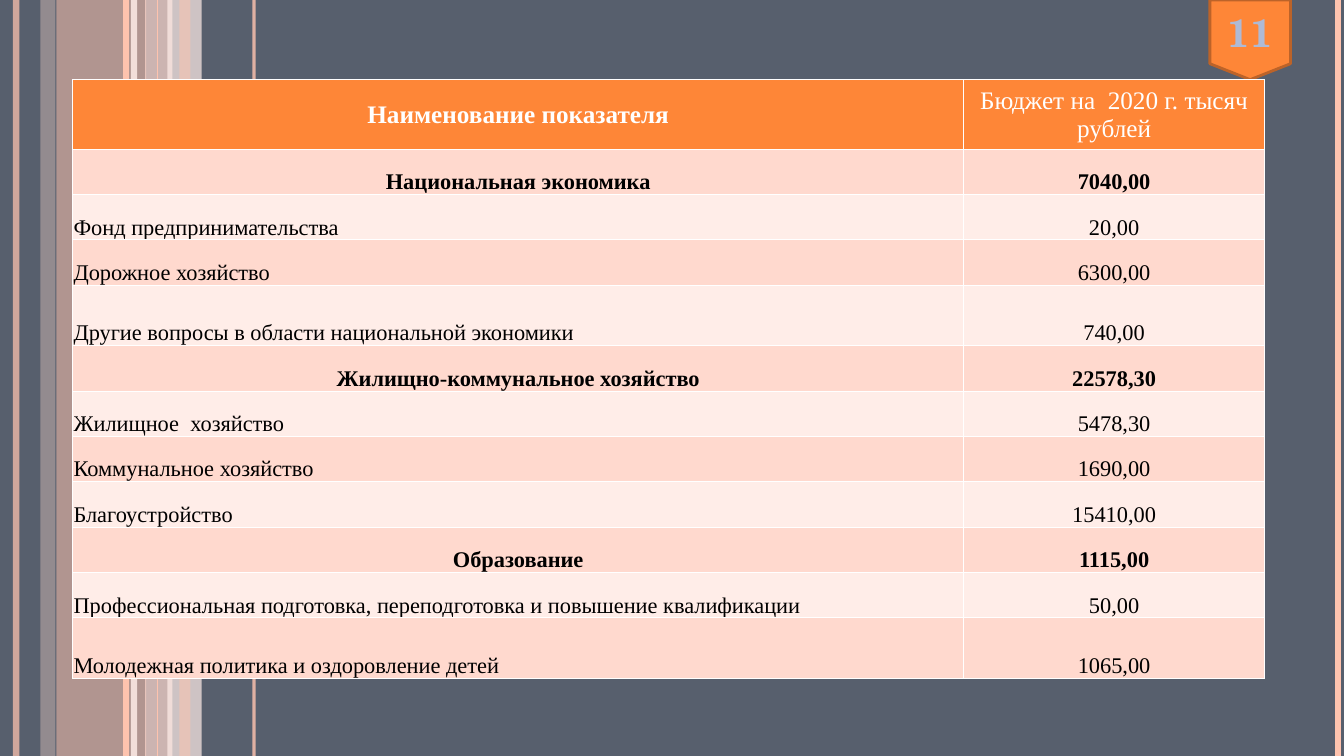
from lxml import etree
from pptx import Presentation
from pptx.dml.color import RGBColor
from pptx.enum.shapes import MSO_CONNECTOR, MSO_SHAPE
from pptx.enum.text import MSO_ANCHOR as Anchor, PP_ALIGN as Align
from pptx.oxml.ns import qn
from pptx.util import Inches, Pt

# Colours
SLATE = RGBColor(0x57, 0x5F, 0x6D)
ORANGE = RGBColor(0xFE, 0x86, 0x37)
BROWN = RGBColor(0xBC, 0x63, 0x29)
PEACH = RGBColor(0xFE, 0xC3, 0xAE)
PINK = RGBColor(0xFF, 0xD9, 0xCE)
PALE = RGBColor(0xFF, 0xED, 0xE8)
BLUE = RGBColor(0xAE, 0xBA, 0xD5)
WHITE = RGBColor(0xFF, 0xFF, 0xFF)
BLACK = RGBColor(0, 0, 0)

# Content: name, value, is it a section total
HEAD = ("Наименование показателя", "Бюджет на  2020 г. тысяч рублей")
ROWS = [
    ("Национальная экономика", "7040,00", True),
    ("Фонд предпринимательства", "20,00", False),
    ("Дорожное хозяйство", "6300,00", False),
    ("Другие вопросы в области национальной экономики", "740,00", False),
    ("Жилищно-коммунальное хозяйство", "22578,30", True),
    ("Жилищное  хозяйство", "5478,30", False),
    ("Коммунальное хозяйство", "1690,00", False),
    ("Благоустройство", "15410,00", False),
    ("Образование", "1115,00", True),
    ("Профессиональная подготовка, переподготовка и повышение квалификации",
     "50,00", False),
    ("Молодежная политика и оздоровление детей", "1065,00", False),
]
TALL = (4, 11)
COLS = (8.84, 2.98)
PAGE = "11"

# Stripes from back to front: left, width, colour, opacity %
BANDS = [(0.56, 0.89, PEACH, 54), (0.4, 0.15, PINK, 36),
         (1.44, 0.27, PINK, 70), (1.66, 0.34, PALE, 71)]
# Lines: x, points, colour, opacity %
LINES = [(0.16, 4.5, PEACH, 73), (1.33, 4.5, PALE, 83),
         (1.25, 4.5, PEACH, 100), (2.52, 2.25, PEACH, 82),
         (1.56, 0.75, PEACH, 100)]
INNER = (1.78, 0.11, PEACH, 51)
EDGE = (13.27, 4.5, PEACH, 100)
HIGH = 7.5

deck = Presentation()
deck.slide_width, deck.slide_height = Inches(13.33), Inches(HIGH)
slide = deck.slides.add_slide(deck.slide_layouts[6])
slide.background.fill.solid()
slide.background.fill.fore_color.rgb = SLATE


def fade(shape, share):
    if share < 100:
        tint = next(shape._element.spPr.iter(qn("a:srgbClr")))
        etree.SubElement(tint, qn("a:alpha"), val=str(share * 1000))


def add_band(left, width, tone, share):
    band = slide.shapes.add_shape(MSO_SHAPE.RECTANGLE, Inches(left), 0,
                                  Inches(width), Inches(HIGH))
    band.shadow.inherit = False
    band.fill.solid()
    band.fill.fore_color.rgb = tone
    band.line.fill.background()
    fade(band, share)


def add_line(x, size, tone, share):
    line = slide.shapes.add_connector(MSO_CONNECTOR.STRAIGHT, Inches(x), 0,
                                      Inches(x), Inches(HIGH))
    line.line.width = Pt(size)
    line.line.color.rgb = tone
    fade(line, share)
    etree.SubElement(line._element.spPr, qn("a:effectLst"))


def style(frame, face, size, tone, bold, align):
    para = frame.paragraphs[0]
    para.alignment = align
    font = para.runs[0].font
    font.name, font.size, font.bold = face, Pt(size), bold
    font.color.rgb = tone


def add_edges(cell):
    props = cell._tc.get_or_add_tcPr()
    for spot, side in enumerate(("lnL", "lnR", "lnT", "lnB")):
        edge = etree.Element(qn("a:" + side), w=str(Pt(1)))
        fill = etree.SubElement(edge, qn("a:solidFill"))
        etree.SubElement(fill, qn("a:srgbClr"), val=str(WHITE))
        props.insert(spot, edge)


def fill_cell(cell, text, size, tone, bold, align, anchor, back):
    cell.text_frame.text = text
    style(cell.text_frame, "Times New Roman", size, tone, bold, align)
    cell.vertical_anchor = anchor
    cell.margin_left = cell.margin_right = cell.margin_top = Inches(0.01)
    cell.margin_bottom = 0
    cell.fill.solid()
    cell.fill.fore_color.rgb = back
    add_edges(cell)


# Striped backdrop
for band in BANDS:
    add_band(*band)
for line in LINES:
    add_line(*line)
add_band(*INNER)
add_line(*EDGE)

# Page tag
tag = slide.shapes.add_shape(MSO_SHAPE.FLOWCHART_OFFPAGE_CONNECTOR,
                             Inches(12), 0, Inches(0.8), Inches(0.79))
tag.shadow.inherit = False
tag.fill.solid()
tag.fill.fore_color.rgb = ORANGE
tag.line.color.rgb = BROWN
tag.line.width = Pt(2)
tag.text_frame.text = PAGE
tag.text_frame.vertical_anchor = Anchor.MIDDLE
style(tag.text_frame, "TeX Gyre Schola", 28, BLUE, True, Align.CENTER)

# Budget table
highs = [0.69] + [0.6 if n in TALL else 0.45
                  for n in range(1, len(ROWS) + 1)]
table = slide.shapes.add_table(len(highs), len(COLS), Inches(0.72),
                               Inches(0.79), Inches(sum(COLS)),
                               Inches(sum(highs))).table
for col, width in zip(table.columns, COLS):
    col.width = Inches(width)
for row, high in zip(table.rows, highs):
    row.height = Inches(high)

for c, text in enumerate(HEAD):
    fill_cell(table.cell(0, c), text, 18, WHITE, c == 0, Align.CENTER,
              Anchor.MIDDLE, ORANGE)
for r, (name, value, total) in enumerate(ROWS, 1):
    back = PINK if r % 2 else PALE
    side = Align.CENTER if total else Align.LEFT
    for c, (text, align) in enumerate(((name, side), (value, Align.CENTER))):
        fill_cell(table.cell(r, c), text, 16, BLACK, total, align,
                  Anchor.BOTTOM, back)

deck.save("out.pptx")
